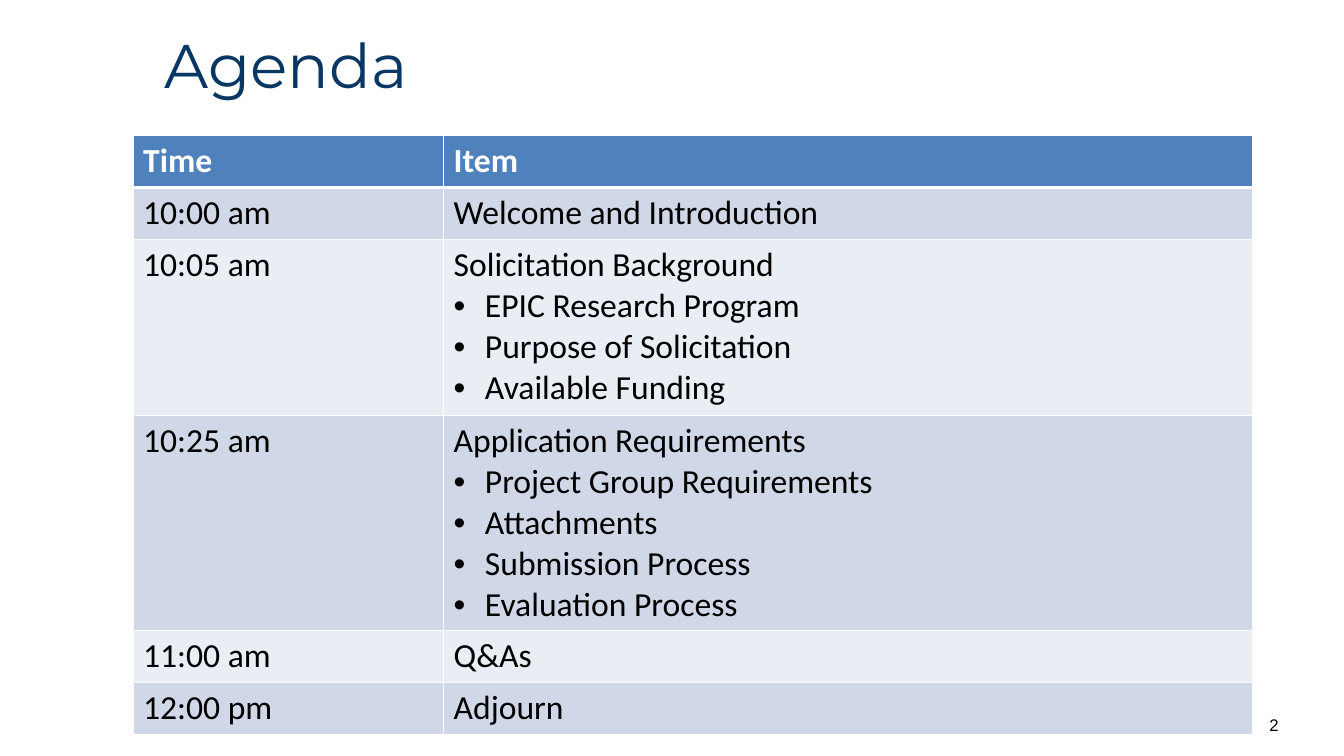
from dataclasses import dataclass

from lxml import etree
from pptx import Presentation
from pptx import util as u
from pptx.dml.color import RGBColor
from pptx.enum import text
from pptx.oxml import ns

PX = 9144


@dataclass(frozen=True)
class Theme:
    navy: str = "083763"
    header: str = "4F81BD"
    bands: tuple = ("D0D8E8", "E9EDF4")
    white: str = "FFFFFF"
    black: str = "000000"
    title_font: str = "Montserrat"
    table_font: str = "Calibri"
    number_font: str = "Arial"
    title_size: int = 44
    table_size: int = 24
    number_size: int = 12


THEME = Theme()
COLUMNS = (308, 802)
LINE_HEIGHTS = {1: 52, 4: 174, 5: 213}
AGENDA = (
    ("Time", ["Item"]),
    ("10:00 am", ["Welcome and Introduction"]),
    ("10:05 am", ["Solicitation Background", "EPIC Research Program",
                  "Purpose of Solicitation", "Available Funding"]),
    ("10:25 am", ["Application Requirements", "Project Group Requirements",
                  "Attachments", "Submission Process", "Evaluation Process"]),
    ("11:00 am", ["Q&As"]),
    ("12:00 pm", ["Adjourn"]),
)


def px(*lengths):
    return [u.Emu(length * PX) for length in lengths]


def add_run(paragraph, words, font, size, color, bold=False):
    run = paragraph.add_run()
    run.text = words
    run.font.name = font
    run.font.size = u.Pt(size)
    run.font.bold = bold
    run.font.color.rgb = RGBColor.from_string(color)


def add_bullet(paragraph):
    properties = paragraph._p.get_or_add_pPr()
    properties.set("marL", str(31 * PX))
    properties.set("indent", str(-31 * PX))
    font = etree.SubElement(properties, ns.qn("a:buFont"))
    font.set("typeface", THEME.number_font)
    etree.SubElement(properties, ns.qn("a:buChar")).set("char", "•")


def add_borders(cell, top, bottom):
    properties = cell._tc.get_or_add_tcPr()
    for side, width in (("L", 1), ("R", 1), ("T", top), ("B", bottom)):
        border = etree.SubElement(properties, ns.qn(f"a:ln{side}"))
        border.set("w", str(u.Pt(width)))
        fill = etree.SubElement(border, ns.qn("a:solidFill"))
        etree.SubElement(fill, ns.qn("a:srgbClr")).set("val", THEME.white)


def fill_cell(cell, lines, row):
    is_header = row == 0
    add_borders(cell, 3 if row == 1 else 1, 3 if is_header else 1)
    cell.fill.solid()
    band = THEME.header if is_header else THEME.bands[(row - 1) % 2]
    cell.fill.fore_color.rgb = RGBColor.from_string(band)
    for index, line in enumerate(lines):
        frame = cell.text_frame
        paragraph = frame.add_paragraph() if index else frame.paragraphs[0]
        if index:
            add_bullet(paragraph)
        add_run(paragraph, line, THEME.table_font, THEME.table_size,
                THEME.white if is_header else THEME.black, is_header)


def add_title(slide, words):
    title = slide.shapes.title
    title.left, title.top, title.width, title.height = px(153, 11, 1089, 114)
    title.text_frame.vertical_anchor = text.MSO_ANCHOR.MIDDLE
    paragraph = title.text_frame.paragraphs[0]
    paragraph.alignment = text.PP_ALIGN.LEFT
    paragraph.line_spacing = 0.9
    add_run(paragraph, words, THEME.title_font, THEME.title_size, THEME.navy)


def add_agenda(slide):
    heights = [LINE_HEIGHTS[len(items)] for _, items in AGENDA]
    table = slide.shapes.add_table(
        len(AGENDA), len(COLUMNS),
        *px(132, 134, sum(COLUMNS), sum(heights))).table
    table.horz_banding = False
    for column, width in zip(table.columns, px(*COLUMNS)):
        column.width = width
    for index, (time, items) in enumerate(AGENDA):
        table.rows[index].height = px(heights[index])[0]
        fill_cell(table.cell(index, 0), [time], index)
        fill_cell(table.cell(index, 1), items, index)


def add_slide_number(slide, number):
    frame = slide.shapes.add_textbox(*px(1081, 699, 197, 40)).text_frame
    frame.word_wrap = True
    frame.vertical_anchor = text.MSO_ANCHOR.MIDDLE
    paragraph = frame.paragraphs[0]
    paragraph.alignment = text.PP_ALIGN.RIGHT
    add_run(paragraph, number, THEME.number_font, THEME.number_size,
            THEME.black)


def main():
    deck = Presentation()
    deck.slide_width, deck.slide_height = px(1333, 750)
    slide = deck.slides.add_slide(deck.slide_layouts[5])
    add_title(slide, "Agenda")
    add_agenda(slide)
    add_slide_number(slide, "2")
    deck.save("out.pptx")


if __name__ == "__main__":
    main()
